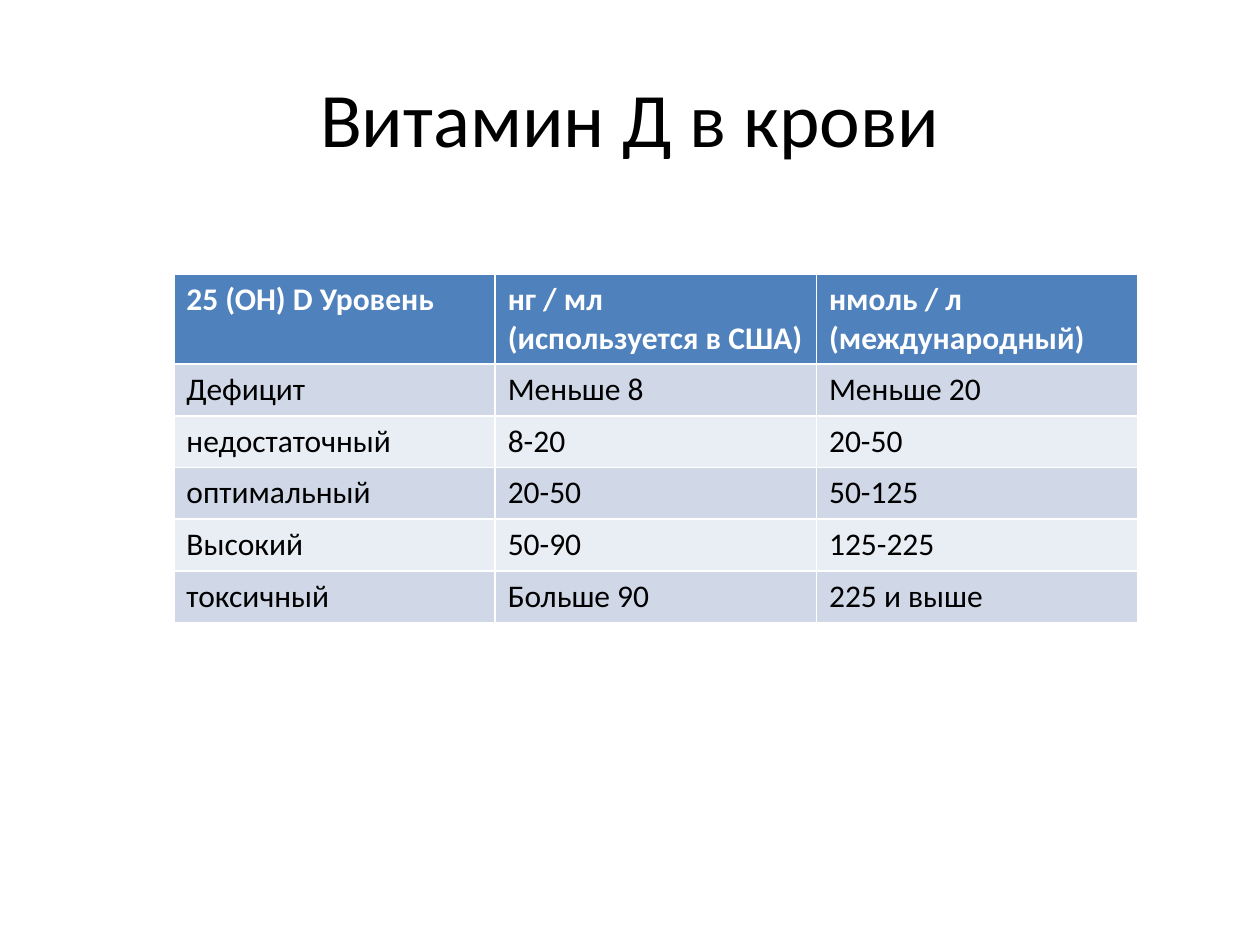
from dataclasses import dataclass

from pptx import Presentation
from pptx.dml.color import RGBColor
from pptx.enum.text import MSO_ANCHOR, PP_ALIGN
from pptx.util import Inches, Pt

CENTER, LEFT = PP_ALIGN.CENTER, PP_ALIGN.LEFT
MIDDLE = MSO_ANCHOR.MIDDLE


@dataclass(frozen=True)
class Theme:
    font: str = "Calibri"
    title_size: int = 44
    table_size: int = 18
    text: str = "000000"
    header_text: str = "FFFFFF"
    header_fill: str = "4F81BD"
    bands: tuple = ("D0D8E8", "E9EDF4")


THEME = Theme()


def write(tf, text, size, color=THEME.text, bold=False, align=LEFT):
    """Fill a text frame, one paragraph per line of text."""
    tf.text = text
    for p in tf.paragraphs:
        p.alignment = align
        for r in p.runs:
            r.font.name = THEME.font
            r.font.size = Pt(size)
            r.font.bold = bold
            r.font.color.rgb = RGBColor.from_string(color)


prs = Presentation()
prs.slide_width, prs.slide_height = Inches(10), Inches(7.5)
s = prs.slides.add_slide(prs.slide_layouts[5])

title = s.shapes.title
title.left, title.top = Inches(0.5), Inches(0.3)
title.width, title.height = Inches(9), Inches(1.25)
title.text_frame.vertical_anchor = MIDDLE
write(title.text_frame, "Витамин Д в крови", THEME.title_size, align=CENTER)

levels = [
    ("25 (OH) D Уровень", "нг / мл\n(используется в США)", "нмоль / л\n(международный)"),
    ("Дефицит", "Меньше 8", "Меньше 20"),
    ("недостаточный", "8-20", "20-50"),
    ("оптимальный", "20-50", "50-125"),
    ("Высокий", "50-90", "125-225"),
    ("токсичный", "Больше 90", "225 и выше"),
]

# The default table style supplies the white rules, thicker below the header.
table = s.shapes.add_table(len(levels), len(levels[0]), Inches(1.38), Inches(2.18),
                           Inches(7.64), Inches(2.73)).table
for column in table.columns:
    column.width = Inches(2.55)

for i, values in enumerate(levels):
    header = i == 0
    table.rows[i].height = Inches(0.7 if header else 0.41)
    fill = THEME.header_fill if header else THEME.bands[(i - 1) % 2]
    color = THEME.header_text if header else THEME.text
    for cell, value in zip(table.rows[i].cells, values):
        cell.fill.solid()
        cell.fill.fore_color.rgb = RGBColor.from_string(fill)
        write(cell.text_frame, value, THEME.table_size, color=color, bold=header)

prs.save("out.pptx")
